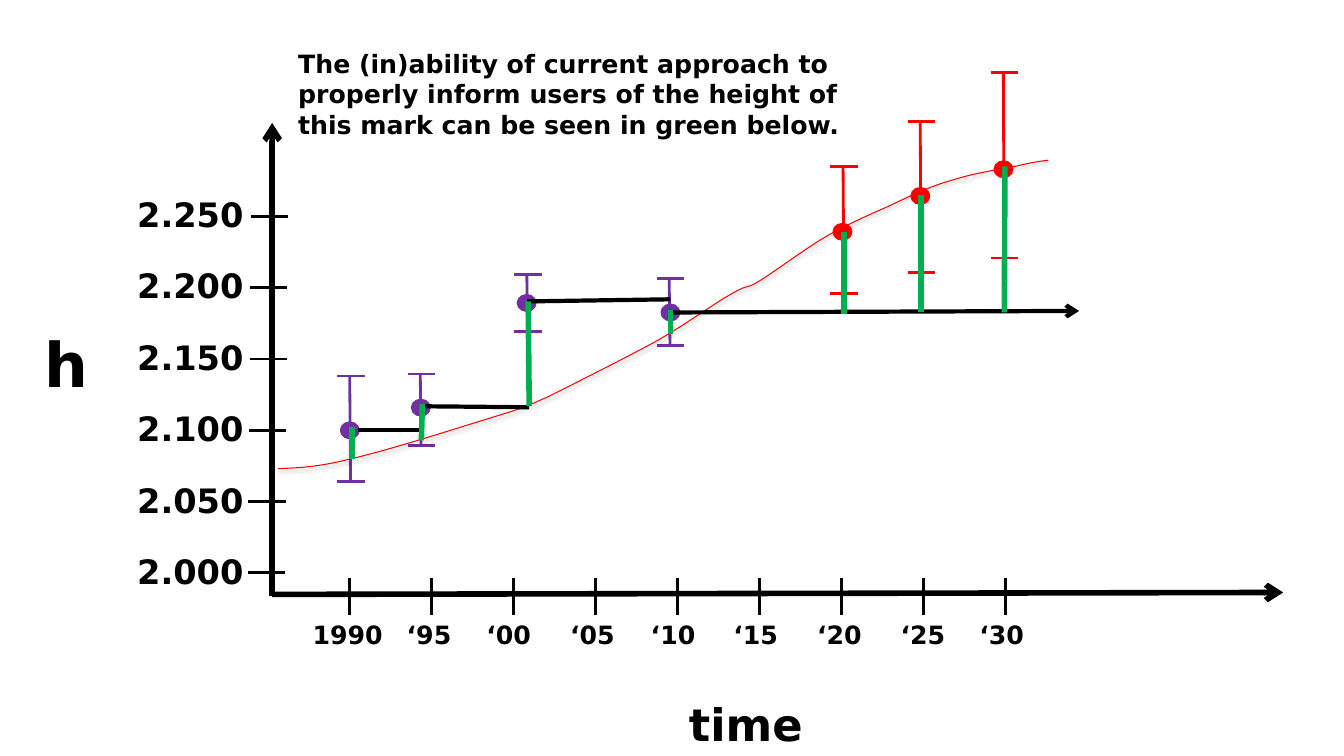
from dataclasses import dataclass

from lxml import etree
from pptx import Presentation
from pptx.dml.color import RGBColor
from pptx.enum.shapes import MSO_CONNECTOR, MSO_SHAPE
from pptx.enum.text import MSO_AUTO_SIZE
from pptx.oxml import parse_xml
from pptx.oxml.ns import nsdecls, qn
from pptx.util import Pt

STRAIGHT = MSO_CONNECTOR.STRAIGHT
OVAL = MSO_SHAPE.OVAL
GROW = MSO_AUTO_SIZE.SHAPE_TO_FIT_TEXT


@dataclass(frozen=True)
class Theme:
    font: str = "DejaVu Sans"
    ink: RGBColor = RGBColor(0, 0, 0)
    past: RGBColor = RGBColor(0x70, 0x30, 0xA0)
    forecast: RGBColor = RGBColor(0xFF, 0, 0)
    error: RGBColor = RGBColor(0, 0xB0, 0x50)
    small: int = 18
    value: int = 24
    time: int = 32
    height: int = 44


THEME = Theme()

YEAR_LABELS = [
    ("1990", 249.8), ("‘95", 307.4), ("‘00", 364.3), ("‘05", 424.1), ("‘10", 481.7),
    ("‘15", 540.7), ("‘20", 600.5), ("‘25", 660.2), ("‘30", 716.4),
]
HEIGHT_LABELS = ["2.250", "2.200", "2.150", "2.100", "2.050", "2.000"]

# Estimate centre x, y, then the bar's x, top and bottom
PAST_ESTIMATES = [
    (249.9, 307.4, 250.6, 268.6, 344.2),
    (300.6, 291.2, 301, 267.1, 318.2),
    (376.2, 216.4, 377.1, 196.3, 236.9),
    (478.9, 223.2, 478.8, 199, 247),
]
FORECAST_ESTIMATES = [
    (601.8, 165.6, 603, 118.9, 209.5),
    (657.4, 140, 658.1, 86.8, 194.7),
    (716.8, 120.9, 717.5, 51.8, 184.3),
]
PUBLISHED_HEIGHTS = [
    ((255.6, 307), (299.5, 307)),
    ((301, 290.2), (378, 290.9)),
    ((376.6, 215.3), (478.8, 213.8)),
]
LATEST_HEIGHT = ((478.8, 223.2), (770.8, 222.1))
HEIGHT_ERRORS = [
    ((602.8, 165.6), (602.8, 224.6)),
    ((657.9, 139), (657.9, 223.2)),
    ((717.8, 118.8), (717.4, 223.2)),
    ((377.3, 215.3), (378, 290.2)),
    ((478.8, 221.8), (478.8, 238.3)),
    ((301.7, 288.7), (301, 314.6)),
    ((251.3, 305.3), (251.3, 327.6)),
]
# Each row holds two Bézier controls and the end of one section
TRUE_HEIGHT_START = (198.7, 334.8)
TRUE_HEIGHT_SECTIONS = [
    ((212.4, 334.1), (226.1, 334.1), (251.3, 327.6)),
    ((277.2, 321.8), (330.5, 304.6), (354.2, 297.4)),
    ((377.3, 290.2), (373, 291.6), (392.4, 283)),
    ((411.1, 273.6), (447.1, 255.6), (469.4, 243.4)),
    ((491, 231.1), (511.2, 216), (523.4, 209.5)),
    ((535.7, 202.3), (531.4, 207.4), (542.2, 200.9)),
    ((553, 194.4), (573.8, 178.6), (589.7, 169.2)),
    ((604.8, 160.6), (619.2, 154.1), (634.3, 147.6)),
    ((649.4, 140.4), (663.8, 133.2), (679.7, 128.9)),
    ((694.8, 123.8), (714.2, 121), (725.8, 118.8)),
    ((737.3, 115.9), (743, 115.2), (748.8, 114.5)),
]
CAPTION = [
    "The (in)ability of current approach to",
    "properly inform users of the height of",
    "this mark can be seen in green below.",
]


def add_line(shapes, start, end, color, width, arrow=False):
    line = shapes.add_connector(STRAIGHT, *map(Pt, (*start, *end)))
    line.line.color.rgb = color
    line.line.width = Pt(width)
    if arrow:
        outline = line.line._get_or_add_ln()
        etree.SubElement(outline, qn("a:tailEnd"), type="arrow")
    etree.SubElement(line._element.spPr, qn("a:effectLst"))


def add_text(shapes, lines, left, top, width, height, size, wrap=False):
    frame = shapes.add_textbox(*map(Pt, (left, top, width, height))).text_frame
    frame.word_wrap = wrap
    frame.auto_size = GROW
    frame.text = "\n".join(lines)
    font_format = {"name": THEME.font, "size": Pt(size), "bold": True}
    for paragraph in frame.paragraphs:
        font = paragraph.runs[0].font
        for name, value in font_format.items():
            setattr(font, name, value)
        font.color.rgb = THEME.ink


def add_axes(shapes):
    add_line(shapes, (194.4, 425.5), (194.4, 87.8), THEME.ink, 4, arrow=True)
    add_line(shapes, (194.4, 424.6), (916.6, 423.2), THEME.ink, 4, arrow=True)
    for index, (year, center) in enumerate(YEAR_LABELS):
        x = 249.8 + 58.59 * index
        add_line(shapes, (x, 412.8), (x, 439.6), THEME.ink, 2)
        width = 67 if len(year) == 4 else 48
        add_text(shapes, [year], center - width / 2, 438.6, width, 29, THEME.small)
    for index, height in enumerate(HEIGHT_LABELS):
        x, y = 179.1 - 0.4 * index, 154.8 + 50.85 * index
        add_line(shapes, (x + 26.6, y), (x, y), THEME.ink, 2)
        add_text(shapes, [height], 90.9, 134.9 + 51 * index, 92.6, 36, THEME.value)
    add_text(shapes, ["h"], 24.9, 229, 46, 60.5, THEME.height)
    add_text(shapes, ["time"], 485, 493.9, 96, 46, THEME.time)


def add_estimate_dot(shapes, x, y, color):
    width, height = 12.24, 10.8
    dot = shapes.add_shape(
        OVAL, Pt(x - width / 2), Pt(y - height / 2), Pt(width), Pt(height))
    dot.shadow.inherit = False
    dot.fill.solid()
    dot.fill.fore_color.rgb = color
    dot.line.color.rgb = color
    dot.line.width = Pt(2)


def add_error_bar(shapes, x, top, bottom, color):
    bar = shapes.add_group_shape().shapes
    add_line(bar, (x - 0.8, top), (x - 0.2, bottom), color, 2)
    for y in (top, bottom):
        add_line(bar, (x - 9.8, y), (x + 9.8, y), color, 2)


def add_estimates(shapes, estimates, color):
    for x, y, *_ in estimates:
        add_estimate_dot(shapes, x, y, color)
    for _, _, x, top, bottom in estimates:
        add_error_bar(shapes, x, top, bottom, color)


def round_sections(outline):
    """Turn every three line segments of a freeform into one cubic Bézier."""
    segments = list(outline.iter(qn("a:lnTo")))
    for first, second, last in zip(segments[::3], segments[1::3], segments[2::3]):
        first.tag = qn("a:cubicBezTo")
        for segment in (second, last):
            first.append(segment[0])
            segment.getparent().remove(segment)


def add_true_height(shapes):
    builder = shapes.build_freeform(*map(Pt, TRUE_HEIGHT_START))
    points = [tuple(map(Pt, point)) for section in TRUE_HEIGHT_SECTIONS for point in section]
    builder.add_line_segments(points, close=False)
    curve = builder.convert_to_shape()
    round_sections(curve._element.spPr)
    curve.fill.background()
    curve.line.color.rgb = THEME.forecast
    curve.line.width = Pt(0.75)
    curve.shadow.inherit = False
    curve._element.spPr.find(qn("a:effectLst")).append(parse_xml(
        f'<a:outerShdw {nsdecls("a")} blurRad="{Pt(3.1)}" dist="{Pt(1.8)}" '
        f'dir="5400000" rotWithShape="0"><a:srgbClr val="{THEME.ink}">'
        '<a:alpha val="35000"/></a:srgbClr></a:outerShdw>'))


def main():
    deck = Presentation()
    deck.slide_width, deck.slide_height = Pt(960), Pt(540)
    shapes = deck.slides.add_slide(deck.slide_layouts[6]).shapes
    add_axes(shapes)
    add_estimates(shapes, PAST_ESTIMATES, THEME.past)
    add_estimates(shapes, FORECAST_ESTIMATES, THEME.forecast)
    add_true_height(shapes)
    for start, end in PUBLISHED_HEIGHTS:
        add_line(shapes, start, end, THEME.ink, 3)
    add_line(shapes, *LATEST_HEIGHT, THEME.ink, 3, arrow=True)
    add_text(shapes, CAPTION, 205.9, 31.1, 480.2, 72.7, THEME.small, wrap=True)
    for start, end in HEIGHT_ERRORS:
        add_line(shapes, start, end, THEME.error, 4)
    deck.save("out.pptx")


if __name__ == "__main__":
    main()
